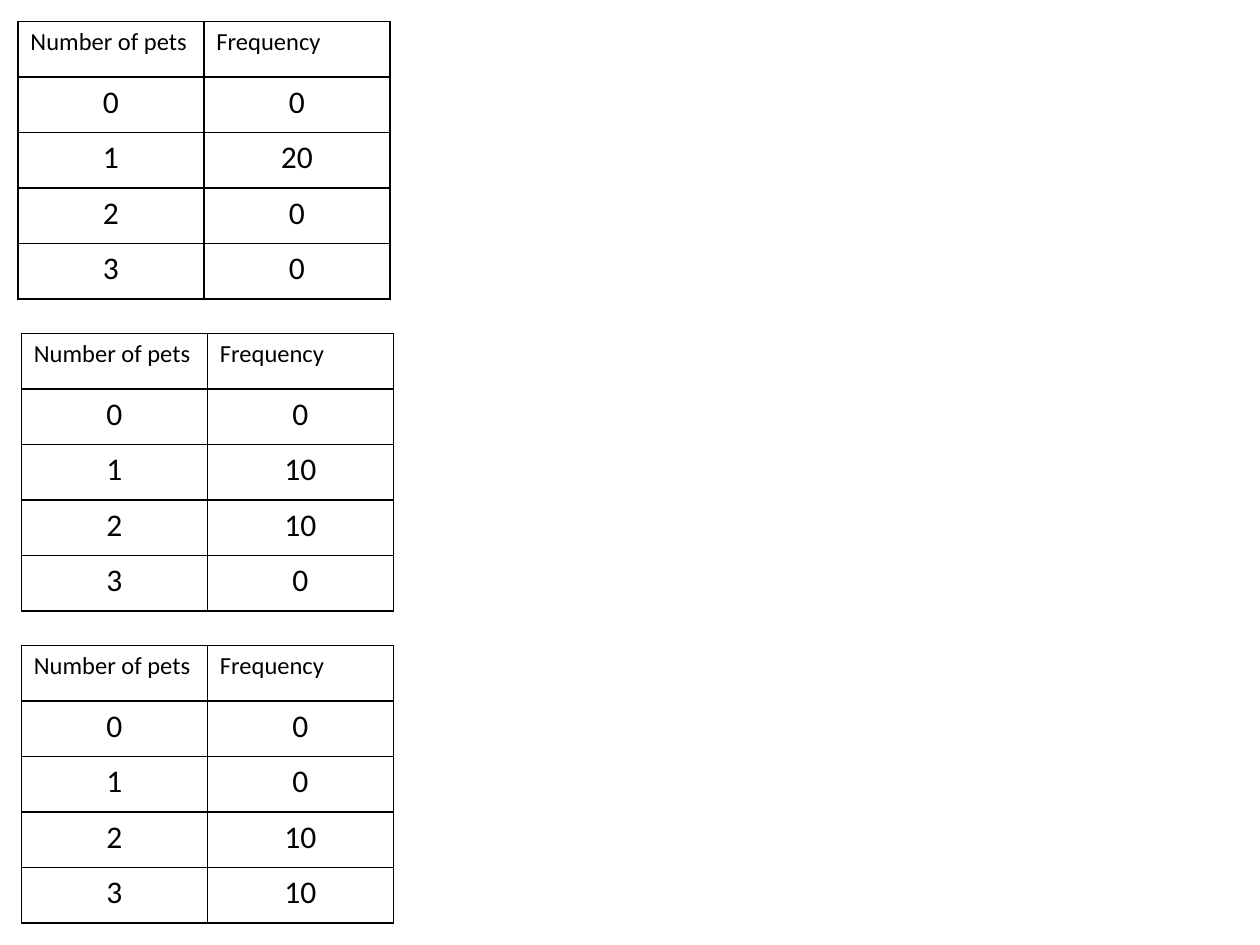
from dataclasses import dataclass

from lxml.etree import SubElement
from pptx import Presentation
from pptx.dml.color import RGBColor
from pptx.enum.text import PP_ALIGN
from pptx.oxml.ns import qn
from pptx.util import Cm, Pt


@dataclass(frozen=True)
class Theme:
    font: str = "Calibri"
    ink: str = "000000"
    head: int = 14
    body: int = 18
    line: int = 1


def write(frame, text, *, font, size, color, align=None):
    para = frame.paragraphs[0]
    para.alignment = align
    run = para.add_run()
    run.text = text
    run.font.name = font
    run.font.size = Pt(size)
    run.font.color.rgb = RGBColor.from_string(color)


class Page:
    def __init__(self, slide, theme):
        self.slide = slide
        self.theme = theme

    def border(self, cell):
        props = cell._tc.get_or_add_tcPr()
        for side in ("lnL", "lnR", "lnT", "lnB"):
            line = SubElement(props, qn(f"a:{side}"), w=str(Pt(self.theme.line)))
            fill = SubElement(line, qn("a:solidFill"))
            SubElement(fill, qn("a:srgbClr"), val=self.theme.ink)

    def table(self, left, top, rows, wide=3.75, high=1.12):
        count = len(rows[0])
        grid = self.slide.shapes.add_table(
            len(rows), count, Cm(left), Cm(top),
            Cm(wide * count), Cm(high * len(rows))).table
        grid.first_row = grid.horz_banding = False
        for col in grid.columns:
            col.width = Cm(wide)
        for r, row in enumerate(rows):
            grid.rows[r].height = Cm(high)
            for c, text in enumerate(row):
                cell = grid.cell(r, c)
                self.border(cell)
                cell.fill.background()
                write(cell.text_frame, str(text),
                      font=self.theme.font, color=self.theme.ink,
                      size=self.theme.body if r else self.theme.head,
                      align=PP_ALIGN.CENTER if r else None)


def main():
    deck = Presentation()
    deck.slide_width, deck.slide_height = Cm(25.4), Cm(19.05)
    page = Page(deck.slides.add_slide(deck.slide_layouts[6]), Theme())

    # Frequency tables, stacked at an equal step
    head = ("Number of pets", "Frequency")
    top, step = 0.43, 6.29
    sets = [
        (0.36, (0, 20, 0, 0)),
        (0.43, (0, 10, 10, 0)),
        (0.43, (0, 0, 10, 10)),
    ]
    for i, (left, counts) in enumerate(sets):
        page.table(left, top + i * step, [head, *enumerate(counts)])

    deck.save("out.pptx")


if __name__ == "__main__":
    main()
